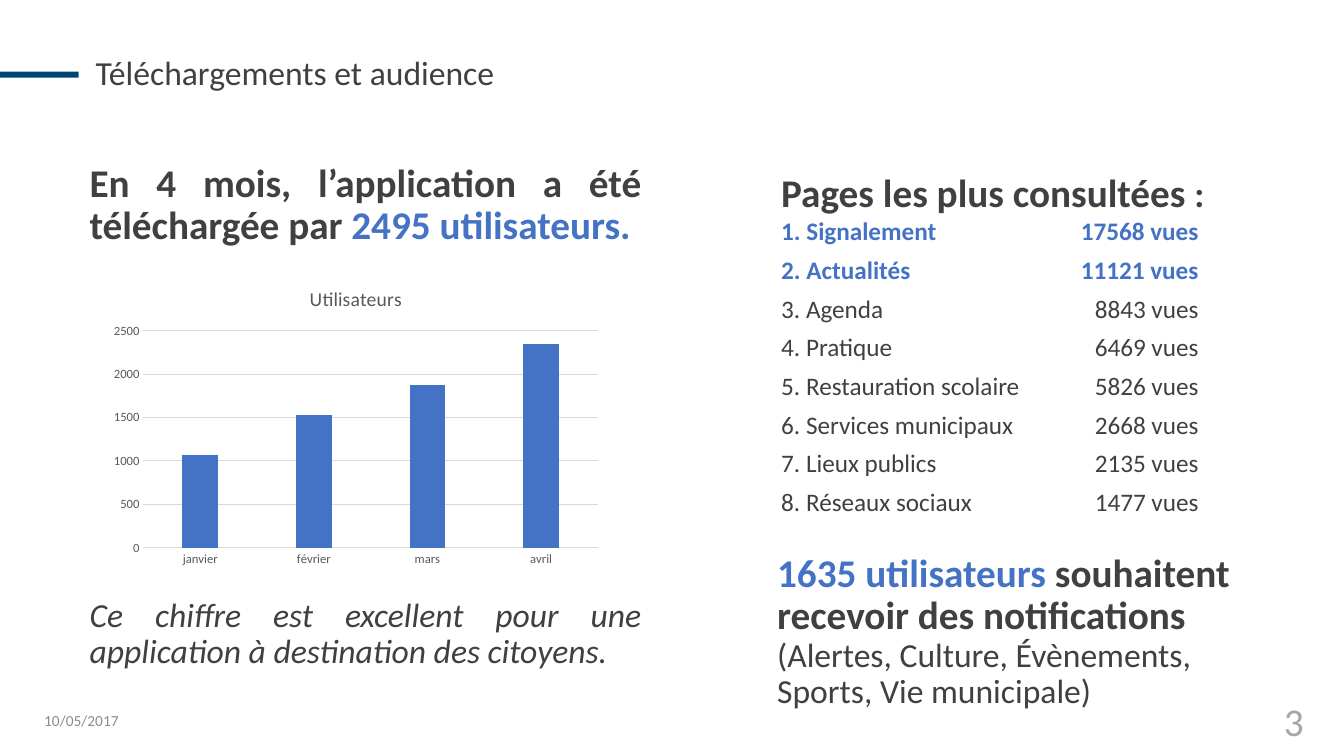
from dataclasses import dataclass

from lxml.etree import SubElement
from pptx import Presentation
from pptx.chart.data import CategoryChartData
from pptx.dml.color import RGBColor
from pptx.enum.chart import XL_CHART_TYPE, XL_TICK_MARK
from pptx.enum.shapes import MSO_SHAPE
from pptx.enum.text import MSO_ANCHOR, PP_ALIGN
from pptx.oxml.ns import qn
from pptx.slide import Slide
from pptx.util import Inches, Pt

FONT = "Calibri"
DARK = "404040"
BLUE = "4472C4"
NAVY = "004571"
GRID = "D9D9D9"
CHART_TEXT = "595959"


@dataclass
class Run:
    text: str
    size: float = 28
    color: str = DARK
    bold: bool = False
    italic: bool = False


@dataclass
class PageViews:
    name: str
    views: int
    highlighted: bool = False


PAGES = [
    PageViews("Signalement", 17568, True),
    PageViews("Actualités", 11121, True),
    PageViews("Agenda", 8843),
    PageViews("Pratique", 6469),
    PageViews("Restauration scolaire", 5826),
    PageViews("Services municipaux", 2668),
    PageViews("Lieux publics", 2135),
    PageViews("Réseaux sociaux", 1477),
]
USERS = {"janvier": 1070, "février": 1530, "mars": 1880, "avril": 2350}


def rgb(color: str) -> RGBColor:
    return RGBColor.from_string(color)


def format_font(font, size: float, color: str, bold: bool = False, italic: bool = False) -> None:
    font.name = FONT
    font.size = Pt(size)
    font.bold = bold
    font.italic = italic
    font.color.rgb = rgb(color)


def add_text(slide: Slide, paragraphs: list[list[Run]], *, left: float, top: float,
             width: float, height: float, align=PP_ALIGN.LEFT,
             anchor=MSO_ANCHOR.TOP, line_spacing: float = 0.9):
    shape = slide.shapes.add_textbox(Inches(left), Inches(top), Inches(width), Inches(height))
    frame = shape.text_frame
    frame.word_wrap = True
    frame.vertical_anchor = anchor
    for index, runs in enumerate(paragraphs):
        paragraph = frame.paragraphs[0] if index == 0 else frame.add_paragraph()
        paragraph.alignment = align
        paragraph.line_spacing = line_spacing
        for item in runs:
            run = paragraph.add_run()
            run.text = item.text
            format_font(run.font, item.size, item.color, item.bold, item.italic)
    return shape


def add_ranking(slide: Slide) -> None:
    heading = [Run("Pages les plus consultées ", bold=True), Run(":", 26, bold=True)]
    rows = [
        [Run(f"{rank}. {page.name}\t{page.views} vues", 18,
             BLUE if page.highlighted else DARK, page.highlighted)]
        for rank, page in enumerate(PAGES, start=1)
    ]
    shape = add_text(slide, [heading, *rows], left=7.65, top=1.39, width=4.86, height=3.82,
                     line_spacing=1.0)
    heading_paragraph, *row_paragraphs = shape.text_frame.paragraphs
    heading_paragraph.line_spacing = 1.5
    for paragraph in row_paragraphs:
        paragraph.space_after = Pt(6)
        properties = paragraph._p.get_or_add_pPr()
        tabs = SubElement(properties, qn("a:tabLst"))
        SubElement(tabs, qn("a:tab"), pos=str(Inches(4.14)), algn="r")


def add_users_chart(slide: Slide) -> None:
    data = CategoryChartData()
    data.categories = list(USERS)
    data.add_series("Utilisateurs", list(USERS.values()))
    frame = slide.shapes.add_chart(XL_CHART_TYPE.COLUMN_CLUSTERED, Inches(1.03), Inches(2.68),
                                   Inches(5), Inches(3), data)
    chart = frame.chart
    format_font(chart.font, 10, CHART_TEXT)
    chart.has_legend = False
    chart.has_title = True
    title = chart.chart_title
    title.include_in_layout = False
    title.text_frame.text = "Utilisateurs"
    format_font(title.text_frame.paragraphs[0].runs[0].font, 14, CHART_TEXT)

    plot = chart.plots[0]
    plot.gap_width = 219
    plot.overlap = -27
    plot.vary_by_categories = False
    fill = plot.series[0].format.fill
    fill.solid()
    fill.fore_color.rgb = rgb(BLUE)

    value_axis = chart.value_axis
    value_axis.minimum_scale = 0
    value_axis.maximum_scale = 2500
    value_axis.major_unit = 500
    value_axis.has_major_gridlines = True
    value_axis.format.line.fill.background()
    for axis in (chart.category_axis, value_axis):
        axis.major_tick_mark = XL_TICK_MARK.NONE
        axis.minor_tick_mark = XL_TICK_MARK.NONE
        format_font(axis.tick_labels.font, 9, CHART_TEXT)
    for line in (chart.category_axis.format.line, value_axis.major_gridlines.format.line):
        line.color.rgb = rgb(GRID)
        line.width = Pt(0.75)


def add_title_bar(slide: Slide) -> None:
    shape = slide.shapes.add_shape(MSO_SHAPE.RECTANGLE, Inches(0), Inches(0.71),
                                   Inches(0.78), Inches(0.06))
    shape.shadow.inherit = False
    shape.fill.solid()
    shape.fill.fore_color.rgb = rgb(NAVY)
    shape.line.fill.background()


def main() -> None:
    presentation = Presentation()
    presentation.slide_width = Inches(13.33)
    presentation.slide_height = Inches(7.5)
    slide = presentation.slides.add_slide(presentation.slide_layouts[6])

    add_title_bar(slide)
    add_text(slide, [[Run("Téléchargements et audience", 24)]],
             left=0.85, top=0.4, width=9.8, height=0.68, anchor=MSO_ANCHOR.MIDDLE)
    add_text(slide, [[Run("En 4 mois, l’application a été téléchargée par ", bold=True),
                      Run("2495 utilisateurs.", color=BLUE, bold=True)]],
             left=0.79, top=1.57, width=5.67, height=1, align=PP_ALIGN.JUSTIFY)
    add_users_chart(slide)
    add_text(slide, [[Run("Ce chiffre est excellent pour une application à destination des citoyens.",
                          24, italic=True)]],
             left=0.79, top=5.89, width=5.67, height=0.94, align=PP_ALIGN.JUSTIFY)
    add_ranking(slide)
    add_text(slide, [[Run("1635 utilisateurs ", color=BLUE, bold=True),
                      Run("souhaitent recevoir des notifications ", bold=True),
                      Run("(Alertes, Culture, Évènements, Sports, Vie municipale)", 24)]],
             left=7.61, top=5.44, width=5.21, height=1.75)
    add_text(slide, [[Run("10/05/2017", 11, "8C8C8C")]],
             left=0.34, top=6.95, width=3, height=0.4, anchor=MSO_ANCHOR.MIDDLE, line_spacing=1.0)
    add_text(slide, [[Run("3", 28, "A6A6A6")]], left=10.03, top=6.95, width=3, height=0.4,
             align=PP_ALIGN.RIGHT, anchor=MSO_ANCHOR.MIDDLE, line_spacing=1.0)
    presentation.save("out.pptx")


if __name__ == "__main__":
    main()
